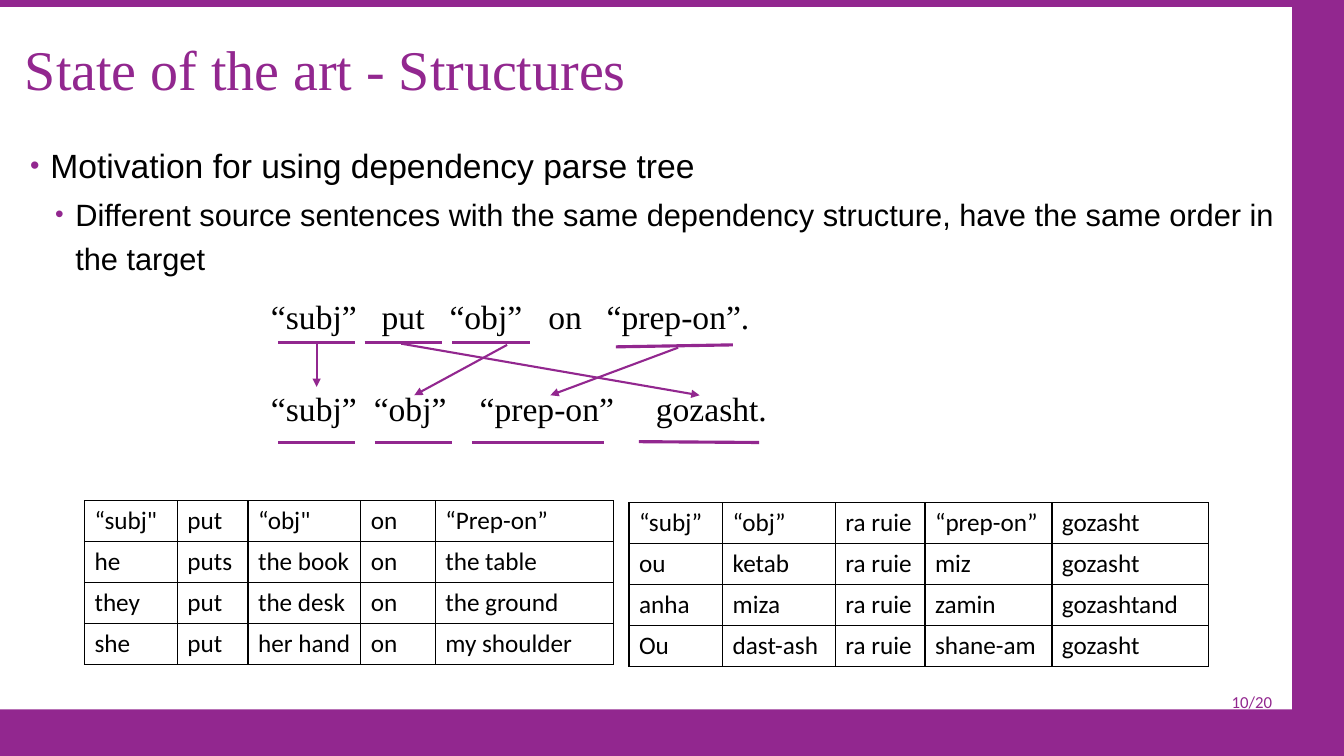
from collections import namedtuple

from lxml import etree
from pptx import Presentation
from pptx.dml.color import RGBColor
from pptx.enum.shapes import MSO_CONNECTOR, MSO_SHAPE
from pptx.enum.text import MSO_ANCHOR, PP_ALIGN
from pptx.oxml.ns import qn
from pptx.util import Cm, Pt

STRAIGHT = MSO_CONNECTOR.STRAIGHT
RECTANGLE = MSO_SHAPE.RECTANGLE
TOP, MIDDLE = MSO_ANCHOR.TOP, MSO_ANCHOR.MIDDLE
LEFT, RIGHT = PP_ALIGN.LEFT, PP_ALIGN.RIGHT

PURPLE = RGBColor(0x92, 0x27, 0x8F)
WHITE = RGBColor(0xFF, 0xFF, 0xFF)
BLACK = RGBColor(0, 0, 0)

Box = namedtuple("Box", "left top width height")

BULLETS = [
    ("Motivation for using dependency parse tree", 24, 0.64, 0.9, 14, 0),
    ("Different source sentences with the same dependency structure, "
     "have the same order in the target", 22, 1.27, 1.2, 2, 4),
]

SENTENCES = [
    (0, "“subj”\tput\t“obj”\ton\t“prep-on”.", [2.79, 4.5, 6.99, 8.46]),
    (2.31, "“subj”\t“obj”\t“prep-on”\tgozasht.", [2.59, 5.26, 9.7]),
]
UNDERLINES = [
    (0.43, 1.3, 2.36, 1.3),
    (2.61, 1.3, 4.57, 1.3),
    (4.82, 1.3, 6.78, 1.3),
    (8.94, 1.4, 11.89, 1.35),
    (0.43, 3.81, 2.36, 3.81),
    (2.87, 3.81, 4.82, 3.81),
    (5.31, 3.81, 8.63, 3.81),
    (9.52, 3.79, 12.55, 3.81),
]
ARROWS = [
    (1.4, 1.32, 1.4, 2.41),
    (3.53, 1.32, 11.05, 2.62),
    (6.2, 1.35, 3.86, 2.62),
    (10.51, 1.42, 7.29, 2.62),
]

ENGLISH_WIDTHS = [2.34, 1.78, 2.84, 1.88, 4.5]
ENGLISH = [
    ["“subj\"", "put", "“obj\"", "on", "“Prep-on”"],
    ["he", "puts", "the book", "on", "the table"],
    ["they", "put", "the desk", "on", "the ground"],
    ["she", "put", "her hand", "on", "my shoulder"],
]
PERSIAN_WIDTHS = [2.36, 2.84, 2.26, 3.2, 3.94]
PERSIAN = [
    ["“subj”", "“obj”", "ra ruie", "“prep-on”", "gozasht"],
    ["ou", "ketab", "ra ruie", "miz", "gozasht"],
    ["anha", "miza", "ra ruie", "zamin", "gozashtand"],
    ["Ou", "dast-ash", "ra ruie", "shane-am", "gozasht"],
]


def add_xml(parent, tag, **attributes):
    return etree.SubElement(parent, qn(tag), attributes)


def style_para(para, font, size, color):
    for span in para.runs:
        span.font.name = font
        span.font.size = Pt(size)
        span.font.color.rgb = color


def add_frame(page, box, anchor=TOP):
    frame = page.shapes.add_textbox(*map(Cm, box)).text_frame
    frame.word_wrap = True
    frame.vertical_anchor = anchor
    return frame


def add_text(page, box, text, font, size, color, anchor=TOP, align=LEFT):
    frame = add_frame(page, box, anchor)
    frame.text = text
    para = frame.paragraphs[0]
    para.alignment = align
    style_para(para, font, size, color)
    return para


def add_panel(page, box):
    fill = page.background.fill
    fill.solid()
    fill.fore_color.rgb = PURPLE
    panel = page.shapes.add_shape(RECTANGLE, *map(Cm, box))
    panel.shadow.inherit = False
    panel.fill.solid()
    panel.fill.fore_color.rgb = WHITE
    panel.line.fill.background()


def add_title(page, box):
    para = add_text(page, box, "State of the art - Structures",
                    "Times New Roman", 40, PURPLE, MIDDLE)
    para.line_spacing = 0.9


def add_bullets(page, box):
    frame = add_frame(page, box)
    for index, (text, size, indent, spacing, before, after) in enumerate(BULLETS):
        para = frame.add_paragraph() if index else frame.paragraphs[0]
        para.text = text
        para.level = index
        para.line_spacing = spacing
        para.space_before = Pt(before)
        para.space_after = Pt(after)
        style_para(para, "Arial", size, BLACK)
        props = para._p.get_or_add_pPr()
        props.set("marL", str(Cm(indent)))
        props.set("indent", str(Cm(-0.51)))
        add_xml(add_xml(props, "a:buClr"), "a:srgbClr", val=str(PURPLE))
        add_xml(props, "a:buSzPct", val="80000")
        add_xml(props, "a:buFont", typeface="Arial")
        add_xml(props, "a:buChar", char="•")


def add_line(page, box, ends, width, arrow=False):
    x1, y1, x2, y2 = ends
    line = page.shapes.add_connector(
        STRAIGHT, Cm(box.left + x1), Cm(box.top + y1),
        Cm(box.left + x2), Cm(box.top + y2))
    line.line.color.rgb = PURPLE
    line.line.width = Pt(width)
    if arrow:
        add_xml(line.line._get_or_add_ln(), "a:tailEnd", type="triangle")
    add_xml(line._element.spPr, "a:effectLst")


def add_alignment_diagram(page, box):
    for offset, text, stops in SENTENCES:
        row = Box(box.left, box.top + offset, box.width, 1.27)
        para = add_text(page, row, text, "Times New Roman", 24, BLACK)
        tabs = add_xml(para._p.get_or_add_pPr(), "a:tabLst")
        for stop in stops:
            add_xml(tabs, "a:tab", pos=str(Cm(stop)), algn="l")
    for ends in UNDERLINES:
        add_line(page, box, ends, 2.25)
    for ends in ARROWS:
        add_line(page, box, ends, 1.5, arrow=True)


def style_cell(cell):
    style_para(cell.text_frame.paragraphs[0], "Calibri", 18, BLACK)
    props = cell._tc.get_or_add_tcPr()
    for side in ("a:lnL", "a:lnR", "a:lnT", "a:lnB"):
        border = add_xml(props, side, w=str(Pt(1)))
        add_xml(add_xml(border, "a:solidFill"), "a:srgbClr", val=str(BLACK))
    cell.fill.background()


def add_word_table(page, box, rows, widths):
    table = page.shapes.add_table(len(rows), len(widths), *map(Cm, box)).table
    table.first_row = False
    table.horz_banding = False
    for column, width in zip(table.columns, widths):
        column.width = Cm(width)
    for row, words in zip(table.rows, rows):
        row.height = Cm(box.height / len(rows))
        for cell, word in zip(row.cells, words):
            cell.text = word
            style_cell(cell)


def add_page_number(page, box):
    add_text(page, box, "10/20", "Calibri", 12, PURPLE, MIDDLE, RIGHT)


def main():
    deck = Presentation()
    deck.slide_width, deck.slide_height = Cm(33.87), Cm(19.05)
    page = deck.slides.add_slide(deck.slide_layouts[6])
    add_panel(page, Box(0, 0.18, 32.56, 17.7))
    add_title(page, Box(0.38, 0.25, 31.98, 3.15))
    add_bullets(page, Box(0.38, 3.63, 32, 13.31))
    add_page_number(page, Box(27.56, 17.17, 4.75, 1.02))
    add_word_table(page, Box(2.13, 12.62, sum(ENGLISH_WIDTHS), 4.12),
                   ENGLISH, ENGLISH_WIDTHS)
    add_word_table(page, Box(15.85, 12.67, sum(PERSIAN_WIDTHS), 4.12),
                   PERSIAN, PERSIAN_WIDTHS)
    add_alignment_diagram(page, Box(6.58, 7.34, 19.08, 3.81))
    deck.save("out.pptx")


if __name__ == "__main__":
    main()
